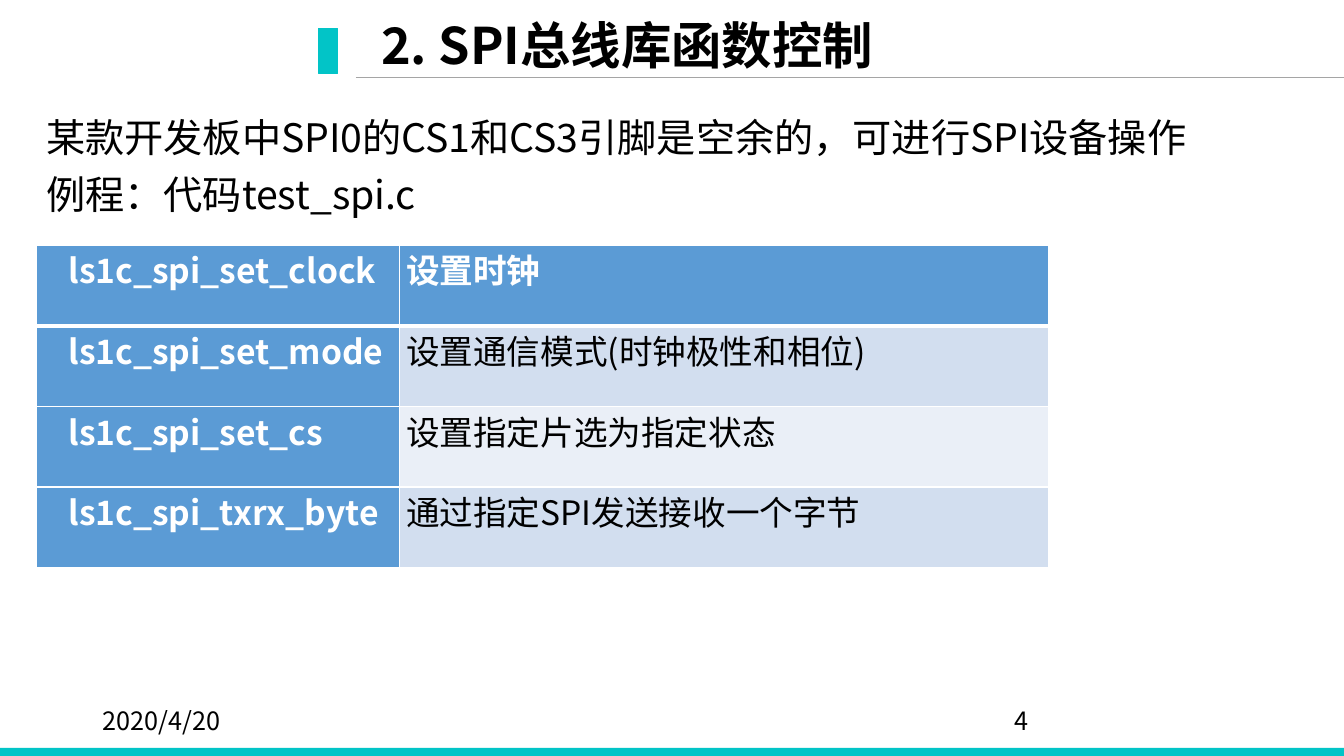
"""Build the slide on SPI bus library functions."""
from lxml import etree
from pptx import Presentation
from pptx.dml.color import RGBColor
from pptx.enum.shapes import MSO_CONNECTOR, MSO_SHAPE
from pptx.enum.text import MSO_ANCHOR, MSO_AUTO_SIZE, PP_ALIGN
from pptx.oxml.ns import qn
from pptx.util import Pt

RECTANGLE = MSO_SHAPE.RECTANGLE
STRAIGHT = MSO_CONNECTOR.STRAIGHT
TOP, MIDDLE = MSO_ANCHOR.TOP, MSO_ANCHOR.MIDDLE
NO_AUTOFIT = MSO_AUTO_SIZE.NONE
LEFT, JUSTIFY = PP_ALIGN.LEFT, PP_ALIGN.JUSTIFY

FONT = "Noto Sans CJK SC"
BLACK, WHITE = "000000", "FFFFFF"
TEAL, GRAY, BLUE = "02C4C7", "A5A5A5", "5B9BD5"
BANDS = ("D2DEEF", "EAEFF7")
FUNCTIONS = [
    ("ls1c_spi_set_clock", "设置时钟"),
    ("ls1c_spi_set_mode", "设置通信模式(时钟极性和相位)"),
    ("ls1c_spi_set_cs", "设置指定片选为指定状态"),
    ("ls1c_spi_txrx_byte", "通过指定SPI发送接收一个字节"),
]


def color(value):
    return RGBColor.from_string(value)


class SlideBuilder:
    def __init__(self, presentation):
        self.slide = presentation.slides.add_slide(presentation.slide_layouts[1])
        self.shapes = self.slide.shapes

    def style(self, paragraph, size, fill=BLACK, bold=False, align=LEFT):
        paragraph.alignment = align
        font = paragraph.font
        font.size, font.bold, font.name = Pt(size), bold, FONT
        font.color.rgb = color(fill)
        defaults = paragraph._p.pPr.find(qn("a:defRPr"))
        etree.SubElement(defaults, qn("a:ea"), typeface=FONT)

    def place(self, shape, left, top, width, height):
        shape.left, shape.top = Pt(left), Pt(top)
        shape.width, shape.height = Pt(width), Pt(height)

    def bar(self, left, top, width, height, outlined=False):
        shape = self.shapes.add_shape(RECTANGLE, Pt(left), Pt(top), Pt(width), Pt(height))
        shape.shadow.inherit = False
        shape.fill.solid()
        shape.fill.fore_color.rgb = color(TEAL)
        if outlined:
            shape.line.color.rgb = color(TEAL)
            shape.line.width = Pt(1)
        else:
            shape.line.fill.background()

    def rule(self, left, right, top):
        connector = self.shapes.add_connector(STRAIGHT, Pt(left), Pt(top), Pt(right), Pt(top))
        connector.line.color.rgb = color(GRAY)
        connector.line.width = Pt(0.5)
        etree.SubElement(connector._element.spPr, qn("a:effectLst"))

    def label(self, text, left, top):
        frame = self.shapes.add_textbox(Pt(left), Pt(top), Pt(216), Pt(28.8)).text_frame
        frame.word_wrap = True
        frame.text = text
        self.style(frame.paragraphs[0], 18)

    def title(self, text, *box):
        shape = self.shapes.title
        self.place(shape, *box)
        frame = shape.text_frame
        frame.text = text
        frame.auto_size, frame.vertical_anchor = NO_AUTOFIT, MIDDLE
        paragraph = frame.paragraphs[0]
        paragraph.line_spacing = 0.9
        self.style(paragraph, 36, bold=True)

    def body(self, lines, *box):
        shape = self.slide.placeholders[1]
        self.place(shape, *box)
        frame = shape.text_frame
        frame.text = "\n".join(lines)
        frame.auto_size, frame.vertical_anchor = NO_AUTOFIT, TOP
        for index, paragraph in enumerate(frame.paragraphs):
            paragraph.line_spacing = 0.9
            paragraph.space_before = Pt(10 if index else 0)
            properties = paragraph._p.get_or_add_pPr()
            properties.set("marL", "0")
            properties.set("indent", "0")
            etree.SubElement(properties, qn("a:buNone"))
            self.style(paragraph, 28)

    def borders(self, cell, top, bottom):
        properties = cell._tc.get_or_add_tcPr()
        for side, width in (("L", 1), ("R", 1), ("T", top), ("B", bottom)):
            line = etree.SubElement(properties, qn(f"a:ln{side}"), w=str(Pt(width)))
            fill = etree.SubElement(line, qn("a:solidFill"))
            etree.SubElement(fill, qn("a:srgbClr"), val=WHITE)

    def table(self, rows, left, top, widths, row_height):
        frame = self.shapes.add_table(len(rows), len(widths), Pt(left), Pt(top),
                                      Pt(sum(widths)), Pt(row_height * len(rows)))
        table = frame.table
        table.first_col = True
        for column, width in zip(table.columns, widths):
            column.width = Pt(width)
        for row_index, values in enumerate(rows):
            table.rows[row_index].height = Pt(row_height)
            for column_index, text in enumerate(values):
                cell = table.cell(row_index, column_index)
                heading = row_index == 0 or column_index == 0
                cell.margin_left = cell.margin_right = Pt(5)
                cell.margin_top = cell.margin_bottom = 0
                self.borders(cell, 3 if row_index == 1 else 1, 3 if row_index == 0 else 1)
                cell.fill.solid()
                cell.fill.fore_color.rgb = color(BLUE if heading else BANDS[(row_index - 1) % 2])
                cell.text = text
                paragraph = cell.text_frame.paragraphs[0]
                if column_index == 0:
                    paragraph._p.get_or_add_pPr().set("indent", str(Pt(18)))
                self.style(paragraph, 24, WHITE if heading else BLACK, heading,
                           LEFT if column_index else JUSTIFY)


def main():
    presentation = Presentation()
    presentation.slide_width, presentation.slide_height = Pt(960), Pt(540)
    builder = SlideBuilder(presentation)
    builder.bar(0, 534.2, 962, 6.5)
    builder.rule(254.2, 960, 55.4)
    builder.bar(227.5, 20.2, 13.7, 32.4, outlined=True)
    builder.label("4", 717.8, 500.4)
    builder.label("2020/4/20", 66.2, 500.4)
    builder.title("2. SPI总线库函数控制", 265, 9.4, 647.3, 50.4)
    builder.body(["某款开发板中SPI0的CS1和CS3引脚是空余的，可进行SPI设备操作",
                  "例程：代码test_spi.c"], 25.9, 81.4, 933.8, 430.6)
    builder.table(FUNCTIONS, 25.9, 175, (259.2, 463.7), 57.6)
    presentation.save("out.pptx")


if __name__ == "__main__":
    main()
